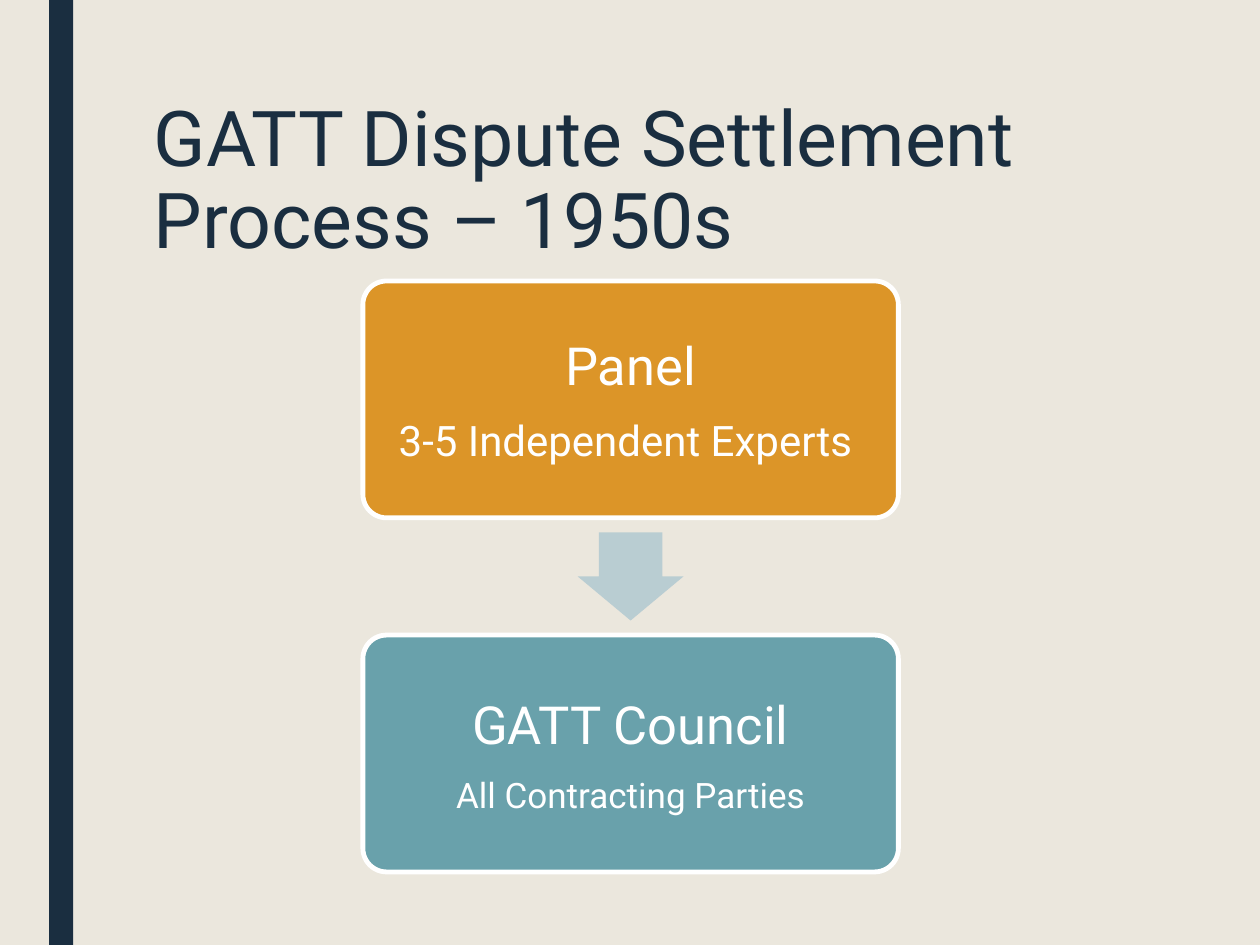
from pptx import Presentation
from pptx.dml.color import RGBColor
from pptx.enum.shapes import MSO_SHAPE
from pptx.enum.text import MSO_ANCHOR, PP_ALIGN
from pptx.util import Inches, Pt

RECT = MSO_SHAPE.RECTANGLE
ROUND = MSO_SHAPE.ROUNDED_RECTANGLE
DOWN = MSO_SHAPE.DOWN_ARROW
TOP, MIDDLE = MSO_ANCHOR.TOP, MSO_ANCHOR.MIDDLE
LEFT, CENTER = PP_ALIGN.LEFT, PP_ALIGN.CENTER
FONT, NAVY, WHITE = "Roboto", "1A2E40", "FFFFFF"
STEPS = [
    ("DC9528", [("Panel", 30), ("3-5 Independent Experts ", 24)]),
    ("69A1AB", [("GATT Council", 30), ("All Contracting Parties", 20)]),
]


def paint(target, color):
    """Give a fill or line format one solid colour."""
    target.solid()
    target.fore_color.rgb = RGBColor.from_string(color)


def apply(target, values):
    """Set each attribute named in values on the target."""
    for name, value in values.items():
        setattr(target, name, value)


def place(target, box):
    """Move the target to a box of left, top, width and height in inches."""
    names = ("left", "top", "width", "height")
    apply(target, dict(zip(names, map(Inches, box))))


def add_form(slide, kind, box, color, adjust=()):
    """Add a flat preset shape without an outline."""
    form = slide.shapes.add_shape(kind, *map(Inches, box))
    form.shadow.inherit = False
    paint(form.fill, color)
    form.line.fill.background()
    for index, value in enumerate(adjust):
        form.adjustments[index] = value
    return form


def write(para, text, size, color, look):
    """Put one run of text in a paragraph with the given format."""
    run = para.add_run()
    run.text = text
    apply(run.font, {"name": FONT, "size": Pt(size)})
    run.font.color.rgb = RGBColor.from_string(color)
    apply(para, look)


def add_title(slide, box):
    """Place and format the slide title."""
    title = slide.shapes.title
    place(title, box)
    frame = title.text_frame
    apply(frame, {"word_wrap": True, "vertical_anchor": TOP})
    write(frame.paragraphs[0], "GATT Dispute Settlement Process – 1950s", 44, NAVY,
          {"alignment": LEFT, "line_spacing": 0.89})


def add_step(slide, box, color, lines):
    """Draw one rounded step with its heading and detail."""
    step = add_form(slide, ROUND, box, color, [0.1])
    paint(step.line.fill, WHITE)
    step.line.width = Pt(2.75)
    frame = step.text_frame
    sides = ("left", "top", "right", "bottom")
    apply(frame, {f"margin_{side}": Inches(0.12) for side in sides})
    apply(frame, {"word_wrap": True, "vertical_anchor": MIDDLE})
    for index, (text, size) in enumerate(lines):
        para = frame.add_paragraph() if index else frame.paragraphs[0]
        write(para, text, size, WHITE, {"alignment": CENTER, "space_after": Pt(10.5)})


def add_flow(slide, box):
    """Stack the steps in the box, with an arrow centred in each gap."""
    left, top, width, height = box
    tall, wide, high = 1.88, 0.84, 0.7
    gap = (height - tall * len(STEPS)) / (len(STEPS) - 1)
    for index, (color, lines) in enumerate(STEPS):
        y = top + index * (tall + gap)
        if index:
            spot = (left + (width - wide) / 2, y - (gap + high) / 2, wide, high)
            add_form(slide, DOWN, spot, "B9CDD2", [0.6, 0.5])
        add_step(slide, (left, y, width, tall), color, lines)


def main():
    """Build and save the slide."""
    deck = Presentation()
    apply(deck, {"slide_width": Inches(10), "slide_height": Inches(7.5)})
    slide = deck.slides.add_slide(deck.slide_layouts[5])
    paint(slide.background.fill, "EBE7DD")
    add_form(slide, RECT, (0.39, 0, 0.19, 7.5), NAVY)
    add_title(slide, (1.12, 0.75, 7.88, 1.62))
    add_flow(slide, (2.88, 2.23, 4.25, 4.69))
    deck.save("out.pptx")


if __name__ == "__main__":
    main()
